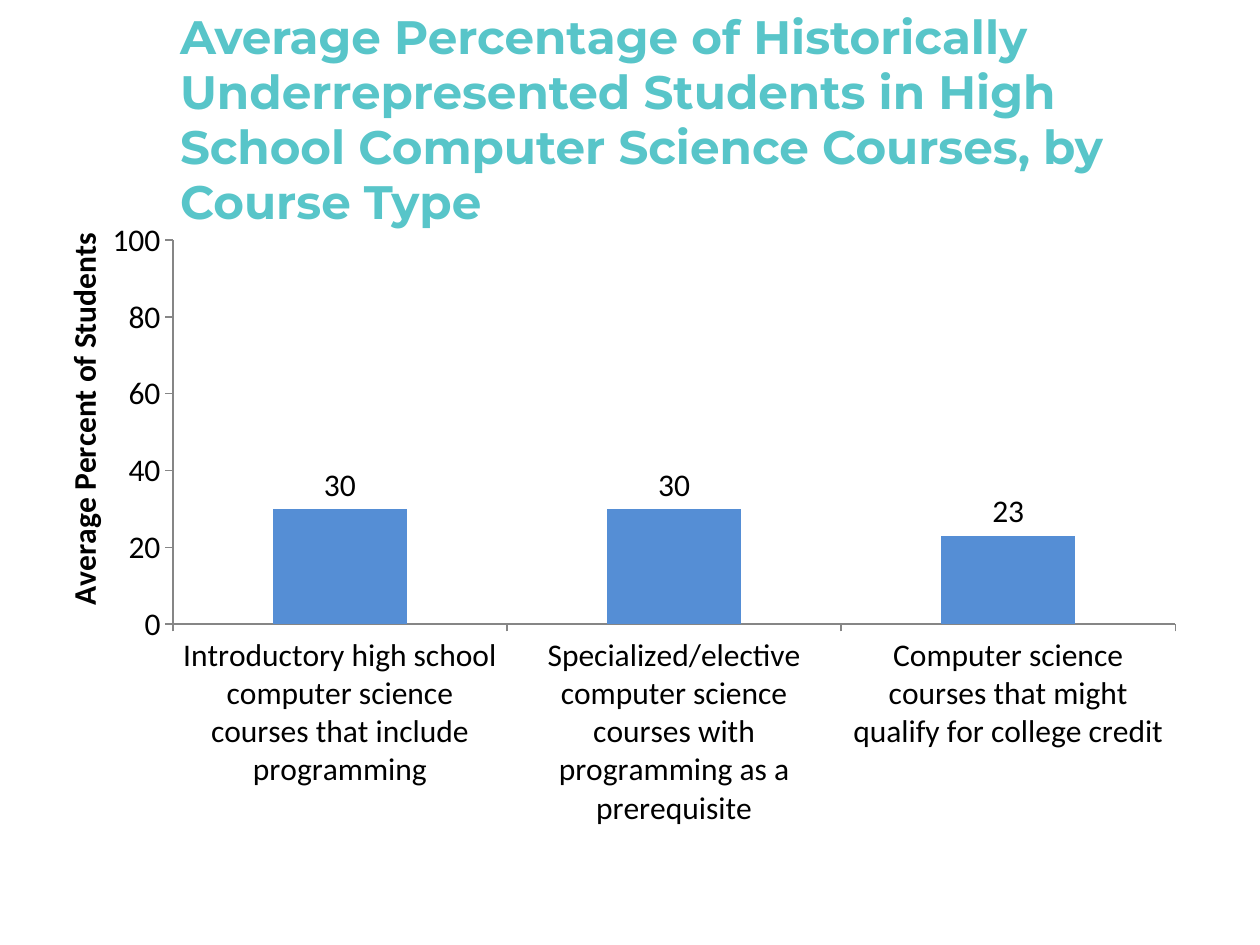
"""Build a slide with a column chart of student shares by course type."""
from lxml.etree import SubElement as Sub
from pptx import Presentation
from pptx.chart.data import CategoryChartData as Data
from pptx.dml.color import RGBColor as Color
from pptx.enum.chart import XL_CHART_TYPE as Kind, XL_LABEL_POSITION as Spot
from pptx.enum.chart import XL_TICK_MARK as Tick
from pptx.enum.text import MSO_ANCHOR as Anchor
from pptx.oxml import parse_xml
from pptx.oxml.ns import nsdecls, qn
from pptx.util import Cm, Pt

TITLE = ("Average Percentage of Historically Underrepresented Students in High "
         "School Computer Science Courses, by Course Type")
AXIS = "Average Percent of Students"
ROWS = [
    ("Introductory high school computer science courses that include programming", 30),
    ("Specialized/elective computer science courses with programming as a prerequisite", 30),
    ("Computer science courses that might qualify for college credit", 23),
]
BOXES = {"chart": (0.43, 3.81, 23.5, 12.9), "title": (3.38, 0.43, 21.16, 4.01)}
PLOT = {"layoutTarget": "inner", "xMode": "edge", "yMode": "edge",
        "x": 0.13, "y": 0.08, "w": 0.86, "h": 0.6}
LABEL = {"xMode": "edge", "yMode": "edge", "x": 0.03, "y": 0.06}
SCALE = {"minimum_scale": 0, "maximum_scale": 100, "major_unit": 20,
         "has_major_gridlines": False}
THEME = {
    "title": {"name": "Montserrat", "size": Pt(26.8), "bold": True, "color": "58C5C9"},
    "chart": {"name": "Calibri", "size": Pt(18), "color": "000000"},
    "axis": {"name": "Calibri", "size": Pt(18), "bold": True, "color": "000000"},
    "bar": "558ED5",
    "line": "868686",
}


def style(item, **vals):
    for key, val in vals.items():
        if key == "color":
            item.color.rgb = Color.from_string(val)
        else:
            setattr(item, key, val)


def place(node, spot, vals):
    for old in node.findall(qn("c:layout")):
        node.remove(old)
    root = parse_xml(f"<c:layout {nsdecls('c')}/>")
    inner = Sub(root, qn("c:manualLayout"))
    for key, val in vals.items():
        Sub(inner, qn(f"c:{key}")).set("val", str(val))
    node.insert(spot, root)


def area(name):
    return [Cm(n) for n in BOXES[name]]


def add_chart(slide):
    data = Data()
    data.categories = [name for name, _ in ROWS]
    data.add_series("Series 1", [num for _, num in ROWS])
    chart = slide.shapes.add_chart(Kind.COLUMN_CLUSTERED, *area("chart"), data).chart
    style(chart, has_legend=False, has_title=False)
    style(chart.font, **THEME["chart"])
    plot = chart.plots[0]
    style(plot, gap_width=150, vary_by_categories=False, has_data_labels=True)
    style(plot.data_labels, show_value=True, position=Spot.OUTSIDE_END)
    fill = plot.series[0].format.fill
    fill.solid()
    fill.fore_color.rgb = Color.from_string(THEME["bar"])
    for axis in (chart.category_axis, chart.value_axis):
        style(axis, major_tick_mark=Tick.OUTSIDE, minor_tick_mark=Tick.NONE)
        style(axis.format.line, color=THEME["line"], width=Pt(0.75))
    style(chart.value_axis, **SCALE)
    head = chart.value_axis.axis_title
    frame = head.text_frame
    frame.text = AXIS
    style(frame.paragraphs[0].runs[0].font, **THEME["axis"])
    body = frame._txBody.bodyPr
    body.set("rot", "-5400000")
    body.set("vert", "horz")
    place(head._element, 1, LABEL)
    place(chart._chartSpace.chart.plotArea, 0, PLOT)


def add_title(slide):
    frame = slide.shapes.add_textbox(*area("title")).text_frame
    style(frame, word_wrap=True, vertical_anchor=Anchor.MIDDLE, text=TITLE)
    para = frame.paragraphs[0]
    para.line_spacing = 0.98
    style(para.runs[0].font, **THEME["title"])


def main():
    deck = Presentation()
    style(deck, slide_width=Cm(25.4), slide_height=Cm(19.05))
    slide = deck.slides.add_slide(deck.slide_layouts[6])
    add_chart(slide)
    add_title(slide)
    deck.save("out.pptx")


if __name__ == "__main__":
    main()
